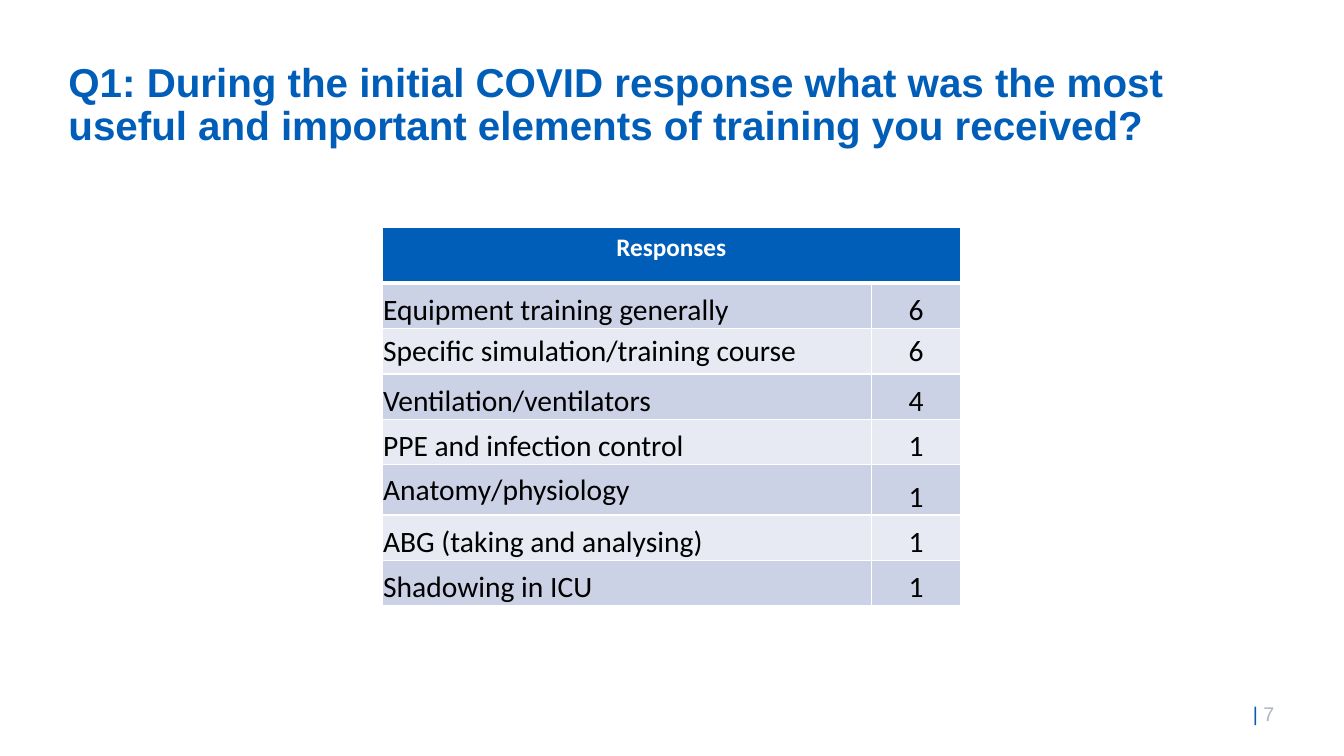
from lxml import etree
from pptx import Presentation
from pptx.dml.color import RGBColor
from pptx.enum.text import MSO_ANCHOR, PP_ALIGN
from pptx.oxml.ns import qn
from pptx.util import Pt

LEFT, CENTER = PP_ALIGN.LEFT, PP_ALIGN.CENTER
TOP, MIDDLE, BOTTOM = MSO_ANCHOR.TOP, MSO_ANCHOR.MIDDLE, MSO_ANCHOR.BOTTOM

# Content
QUESTION = ("Q1: During the initial COVID response what was the most useful "
            "and important elements of training you received?")
HEADING = "Responses"
RESPONSES = [  # answer, count, anchor of answer, anchor of count
    ("Equipment training generally", 6, BOTTOM, BOTTOM),
    ("Specific simulation/training course", 6, MIDDLE, MIDDLE),
    ("Ventilation/ventilators", 4, BOTTOM, BOTTOM),
    ("PPE and infection control", 1, BOTTOM, BOTTOM),
    ("Anatomy/physiology", 1, MIDDLE, BOTTOM),
    ("ABG (taking and analysing)", 1, BOTTOM, BOTTOM),
    ("Shadowing in ICU", 1, BOTTOM, BOTTOM),
]
PAGE_NUMBER = [("| ", "005EB8"), ("7", "ADB6BE")]

# Style
BLUE, WHITE, BLACK = "005EB8", "FFFFFF", "000000"
BANDS = ("CCD2E6", "E7EAF3")
COLUMN_WIDTHS = (349.9, 63.4)
HEADING_HEIGHT, ROW_HEIGHT, TALL_ROW_HEIGHT = 39.6, 32.4, 36
TALL_ROW = 5


def color(hex_value):
    return RGBColor.from_string(hex_value)


def set_font(font, name, size, hex_value, bold=False):
    font.name, font.size, font.bold = name, Pt(size), bold
    font.color.rgb = color(hex_value)


def set_borders(cell, bottom_width):
    properties = cell._tc.get_or_add_tcPr()
    widths = {"a:lnL": 1, "a:lnR": 1, "a:lnT": 1, "a:lnB": bottom_width}
    for position, (side, width) in enumerate(widths.items()):
        line = etree.Element(qn(side), w=str(Pt(width)))
        fill = etree.SubElement(line, qn("a:solidFill"))
        etree.SubElement(fill, qn("a:srgbClr"), val=WHITE)
        properties.insert(position, line)


def style_cell(cell, text, fill, size, text_color, align, anchor,
               bold=False, bottom_width=1):
    cell.text = text
    cell.vertical_anchor = anchor
    cell.fill.solid()
    cell.fill.fore_color.rgb = color(fill)
    paragraph = cell.text_frame.paragraphs[0]
    paragraph.alignment = align
    set_font(paragraph.font, "Calibri", size, text_color, bold)
    set_borders(cell, bottom_width)


presentation = Presentation()
presentation.slide_width, presentation.slide_height = Pt(960), Pt(540)
slide = presentation.slides.add_slide(presentation.slide_layouts[6])

# Question
question = slide.shapes.add_textbox(Pt(41.8), Pt(41), Pt(876.2), Pt(98.6)).text_frame
question.word_wrap = True
question.text = QUESTION
question.paragraphs[0].line_spacing = 0.9
set_font(question.paragraphs[0].font, "Arial", 28.8, BLUE, True)

# Responses table
row_heights = [HEADING_HEIGHT] + [ROW_HEIGHT] * len(RESPONSES)
row_heights[TALL_ROW] = TALL_ROW_HEIGHT
table = slide.shapes.add_table(
    len(row_heights), len(COLUMN_WIDTHS), Pt(272.9), Pt(162.7),
    Pt(sum(COLUMN_WIDTHS)), Pt(sum(row_heights))).table
for column, width in zip(table.columns, COLUMN_WIDTHS):
    column.width = Pt(width)
for row, height in zip(table.rows, row_heights):
    row.height = Pt(height)

table.cell(0, 0).merge(table.cell(0, 1))
for column, text in enumerate((HEADING, "")):
    style_cell(table.cell(0, column), text, BLUE, 18, WHITE, CENTER, TOP,
               bold=True, bottom_width=3)

for row, (answer, count, answer_anchor, count_anchor) in enumerate(RESPONSES, 1):
    band = BANDS[(row - 1) % 2]
    entries = ((answer, LEFT, answer_anchor), (str(count), CENTER, count_anchor))
    for column, (text, align, anchor) in enumerate(entries):
        cell = table.cell(row, column)
        cell.margin_left = cell.margin_right = cell.margin_top = Pt(0.75)
        cell.margin_bottom = 0
        style_cell(cell, text, band, 21.1, BLACK, align, anchor)

# Page number
footer = slide.shapes.add_textbox(Pt(887.8), Pt(497.5), Pt(67.7), Pt(24.5)).text_frame
footer.word_wrap = True
for text, hex_value in PAGE_NUMBER:
    run = footer.paragraphs[0].add_run()
    run.text = text
    set_font(run.font, "Arial", 14.1, hex_value)

presentation.save("out.pptx")
